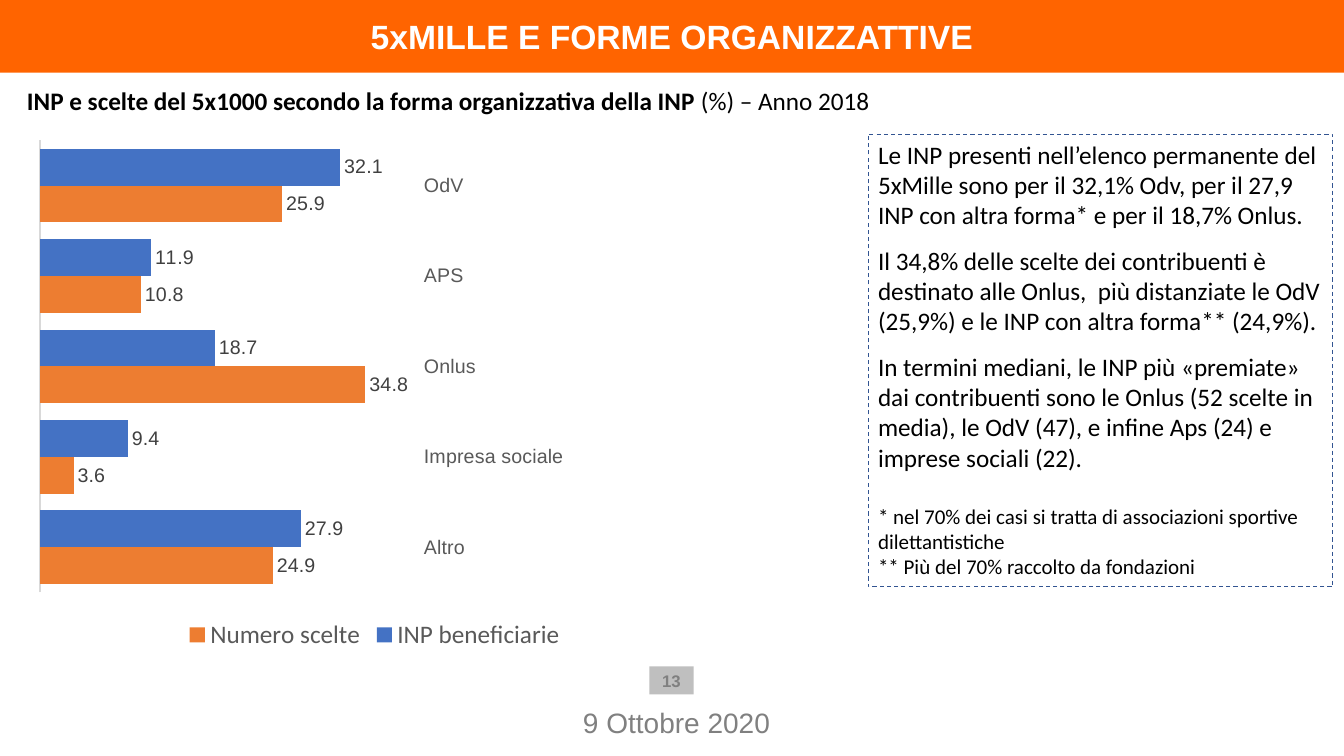
from lxml import etree
from pptx import Presentation
from pptx.chart.data import CategoryChartData
from pptx.dml.color import RGBColor
from pptx.enum.chart import (XL_CHART_TYPE, XL_LABEL_POSITION, XL_LEGEND_POSITION,
                             XL_TICK_LABEL_POSITION, XL_TICK_MARK)
from pptx.enum.dml import MSO_LINE
from pptx.enum.shapes import MSO_SHAPE
from pptx.enum.text import MSO_ANCHOR, PP_ALIGN
from pptx.oxml.ns import qn
from pptx.util import Inches, Pt

RECTANGLE = MSO_SHAPE.RECTANGLE
CENTER, LEFT = PP_ALIGN.CENTER, PP_ALIGN.LEFT
TOP, MIDDLE, BOTTOM = MSO_ANCHOR.TOP, MSO_ANCHOR.MIDDLE, MSO_ANCHOR.BOTTOM

# Content
TITLE = "5xMILLE E FORME ORGANIZZATTIVE"
HEADING_BOLD = "INP e scelte del 5x1000 secondo la forma organizzativa della INP "
HEADING_PLAIN = "(%) – Anno 2018"
PAGE_NUMBER = "13"
DATE = "9 Ottobre 2020"
CATEGORIES = ["OdV", "APS", "Onlus", "Impresa sociale", "Altro"]
SERIES = [
    ("INP beneficiarie", [32.1, 11.9, 18.7, 9.4, 27.9], "beneficiaries"),
    ("Numero scelte", [25.9, 10.8, 34.8, 3.6, 24.9], "choices"),
]
# Text, type size, space before in points
COMMENTARY = [
    ("Le INP presenti nell’elenco permanente del 5xMille sono per il 32,1% Odv, "
     "per il 27,9 INP con altra forma* e per il 18,7% Onlus.", "body", 0),
    ("Il 34,8% delle scelte dei contribuenti è destinato alle Onlus,  più distanziate "
     "le OdV (25,9%) e le INP con altra forma** (24,9%).", "body", 11),
    ("In termini mediani, le INP più «premiate» dai contribuenti sono le Onlus "
     "(52 scelte in media), le OdV (47), e infine Aps (24) e imprese sociali (22).", "body", 11),
    ("* nel 70% dei casi si tratta di associazioni sportive dilettantistiche", "note", 22),
    ("** Più del 70% raccolto da fondazioni", "note", 0),
]
PLOT_LAYOUT = {"x": 0.017, "y": 0.029, "w": 0.54, "h": 0.853}

THEME = {
    "colors": {"banner": "FF6400", "white": "FFFFFF", "text": "000000", "muted": "808080",
               "badge": "BFBFBF", "border": "325491", "axis": "D9D9D9", "axis_text": "595959",
               "value": "404040", "beneficiaries": "4472C4", "choices": "ED7D31"},
    "sizes": {"title": 24, "date": 20, "body": 18, "note": 15, "chart": 14, "badge": 12},
    "heading_font": "Arial",
    "body_font": "Calibri",
}
HEADING_FONT, BODY_FONT = THEME["heading_font"], THEME["body_font"]


def color(name):
    return RGBColor.from_string(THEME["colors"][name])


def style(font, size, color_name, name, bold=False):
    font.size = Pt(THEME["sizes"][size])
    font.color.rgb = color(color_name)
    font.name = name
    font.bold = bold


def add_run(paragraph, text, *font_style):
    run = paragraph.add_run()
    run.text = text
    style(run.font, *font_style)


def set_frame(shape, anchor, alignment, margins=(0.1, 0.05, 0.1, 0.05)):
    frame = shape.text_frame
    frame.word_wrap = True
    frame.vertical_anchor = anchor
    (frame.margin_left, frame.margin_top,
     frame.margin_right, frame.margin_bottom) = map(Inches, margins)
    frame.paragraphs[0].alignment = alignment
    return frame


def add_rectangle(slide, box, fill=None):
    shape = slide.shapes.add_shape(RECTANGLE, *map(Inches, box))
    shape.shadow.inherit = False
    shape.line.fill.background()
    if fill:
        shape.fill.solid()
        shape.fill.fore_color.rgb = color(fill)
    else:
        shape.fill.background()
    return shape


def add_text_box(slide, box, *frame_style):
    shape = slide.shapes.add_textbox(*map(Inches, box))
    return set_frame(shape, *frame_style).paragraphs[0]


def set_plot_layout(chart):
    plot_area = chart._chartSpace.chart.plotArea
    for existing in plot_area.findall(qn("c:layout")):
        plot_area.remove(existing)
    layout = etree.Element(qn("c:layout"))
    plot_area.insert(0, layout)
    manual = etree.SubElement(layout, qn("c:manualLayout"))
    settings = [("layoutTarget", "inner"), ("xMode", "edge"), ("yMode", "edge")]
    for tag, value in settings + list(PLOT_LAYOUT.items()):
        etree.SubElement(manual, qn("c:" + tag)).set("val", str(value))


def add_bar_chart(slide, box):
    data = CategoryChartData(number_format="0.0")
    data.categories = CATEGORIES
    for name, values, _ in SERIES:
        data.add_series(name, values)
    chart = slide.shapes.add_chart(XL_CHART_TYPE.BAR_CLUSTERED, *map(Inches, box), data).chart
    style(chart.font, "chart", "text", BODY_FONT)
    chart.has_title = False
    set_plot_layout(chart)

    # Axes
    category_axis = chart.category_axis
    category_axis.reverse_order = True
    category_axis.major_tick_mark = XL_TICK_MARK.NONE
    category_axis.minor_tick_mark = XL_TICK_MARK.NONE
    category_axis.tick_label_position = XL_TICK_LABEL_POSITION.HIGH
    category_axis.format.line.color.rgb = color("axis")
    category_axis.format.line.width = Pt(0.75)
    style(category_axis.tick_labels.font, "chart", "axis_text", HEADING_FONT)
    value_axis = chart.value_axis
    value_axis.minimum_scale, value_axis.maximum_scale = 0, 40
    value_axis.has_major_gridlines = False
    value_axis.visible = False

    # Bars and their values
    plot = chart.plots[0]
    plot.gap_width = 45
    plot.overlap = 0
    plot.vary_by_categories = False
    for series, (_, _, fill) in zip(plot.series, SERIES):
        series.format.fill.solid()
        series.format.fill.fore_color.rgb = color(fill)
        labels = series.data_labels
        labels.show_value = True
        labels.number_format = "0.0"
        labels.number_format_is_linked = False
        labels.position = XL_LABEL_POSITION.OUTSIDE_END
        style(labels.font, "chart", "value", HEADING_FONT)

    # Legend
    chart.has_legend = True
    chart.legend.position = XL_LEGEND_POSITION.BOTTOM
    chart.legend.include_in_layout = False
    style(chart.legend.font, "body", "axis_text", BODY_FONT)


def main():
    presentation = Presentation()
    presentation.slide_width, presentation.slide_height = Inches(13.33), Inches(7.5)
    slide = presentation.slides.add_slide(presentation.slide_layouts[6])

    # Page number and date
    badge = add_rectangle(slide, (6.44, 6.61, 0.44, 0.28), "badge")
    frame = set_frame(badge, MIDDLE, CENTER, (0, 0, 0, 0))
    add_run(frame.paragraphs[0], PAGE_NUMBER, "badge", "muted", HEADING_FONT, True)
    paragraph = add_text_box(slide, (3.95, 6.97, 5.52, 0.36), BOTTOM, CENTER, (0.1, 0.05, 0.1, 0))
    add_run(paragraph, DATE, "date", "muted", HEADING_FONT)

    # Title banner and heading
    banner = add_rectangle(slide, (0, 0, 13.33, 0.72), "banner")
    frame = set_frame(banner, MIDDLE, CENTER, (0.31, 0.16, 0.31, 0.16))
    add_run(frame.paragraphs[0], TITLE, "title", "white", HEADING_FONT, True)
    paragraph = add_text_box(slide, (0, 0.8, 8.89, 0.4), TOP, CENTER)
    add_run(paragraph, HEADING_BOLD, "body", "text", BODY_FONT, True)
    add_run(paragraph, HEADING_PLAIN, "body", "text", BODY_FONT)

    # Chart
    add_bar_chart(slide, (0.28, 1.24, 6.87, 5.26))

    # Commentary
    panel = add_rectangle(slide, (8.61, 1.33, 4.61, 4.49))
    panel.line.color.rgb = color("border")
    panel.line.width = Pt(0.75)
    panel.line.dash_style = MSO_LINE.DASH
    frame = set_frame(panel, TOP, LEFT)
    for index, (text, size, space_before) in enumerate(COMMENTARY):
        paragraph = frame.add_paragraph() if index else frame.paragraphs[0]
        paragraph.alignment = LEFT
        if space_before:
            paragraph.space_before = Pt(space_before)
        add_run(paragraph, text, size, "text", BODY_FONT)

    presentation.save("out.pptx")


if __name__ == "__main__":
    main()
